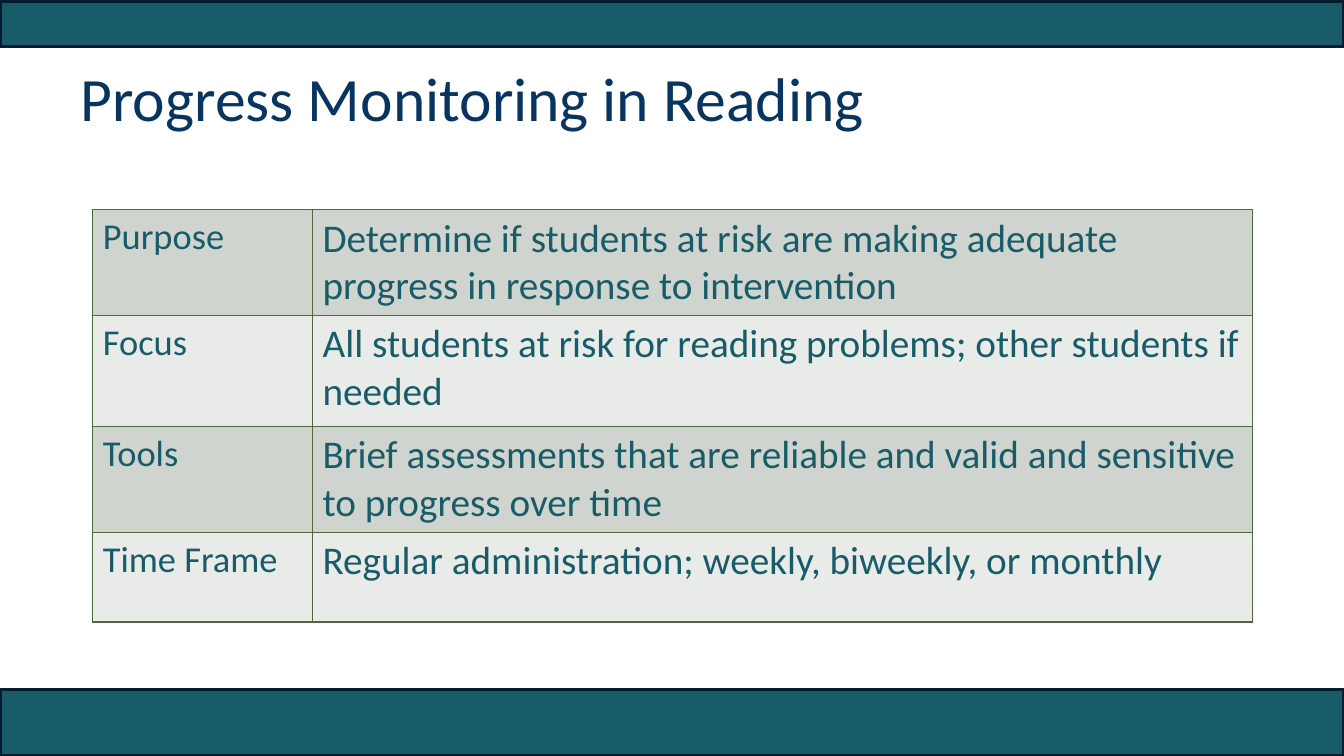
from lxml.etree import SubElement
from pptx import Presentation
from pptx.dml.color import RGBColor
from pptx.enum.shapes import MSO_SHAPE
from pptx.enum.text import MSO_ANCHOR, PP_ALIGN
from pptx.oxml.ns import qn
from pptx.util import Inches, Pt

# Content
TITLE = "Progress Monitoring in Reading"
ROWS = [
    ("Purpose", "Determine if students at risk are making adequate progress in response to intervention"),
    ("Focus", "All students at risk for reading problems; other students if needed"),
    ("Tools", "Brief assessments that are reliable and valid and sensitive to progress over time"),
    ("Time Frame", "Regular administration; weekly, biweekly, or monthly"),
]

# Layout and style
SLIDE_WIDTH, SLIDE_HEIGHT = 13.33, 7.5
BANDS = [(6.84, 0.66), (0.01, 0.45)]  # top, height
COLUMN_WIDTHS = [2.18, 9.32]
ROW_HEIGHTS = [1.05, 1.1, 1.05, 0.89]
COLUMN_SIZES = [26, 28]
ROW_FILLS = ["D0D4CE", "E9EBE8"]
TEAL, NAVY, BAND_LINE, BORDER = "185C69", "08355F", "041B30", "4F693D"


def color(value):
    return RGBColor.from_string(value)


def write(frame, text, size, font_color, line_spacing=1.0):
    frame.word_wrap = True
    paragraph = frame.paragraphs[0]
    paragraph.text = text
    paragraph.alignment = PP_ALIGN.LEFT
    paragraph.line_spacing = line_spacing
    font = paragraph.runs[0].font
    font.name, font.size = "Calibri", Pt(size)
    font.color.rgb = color(font_color)


def add_borders(cell, line_color, width):
    properties = cell._tc.get_or_add_tcPr()
    for position, side in enumerate(("a:lnL", "a:lnR", "a:lnT", "a:lnB")):
        line = SubElement(properties, qn(side), w=str(Pt(width)))
        fill = SubElement(line, qn("a:solidFill"))
        SubElement(fill, qn("a:srgbClr"), val=line_color)
        properties.insert(position, line)  # borders come before the fill


presentation = Presentation()
presentation.slide_width = Inches(SLIDE_WIDTH)
presentation.slide_height = Inches(SLIDE_HEIGHT)
slide = presentation.slides.add_slide(presentation.slide_layouts[5])

# Bands at the bottom and top
for top, height in BANDS:
    band = slide.shapes.add_shape(
        MSO_SHAPE.RECTANGLE, 0, Inches(top), Inches(SLIDE_WIDTH), Inches(height))
    band.shadow.inherit = False
    band.fill.solid()
    band.fill.fore_color.rgb = color(TEAL)
    band.line.color.rgb = color(BAND_LINE)
    band.line.width = Pt(2.5)

# Title
title = slide.shapes.title
title.left, title.top = Inches(0.7), Inches(0.63)
title.width, title.height = Inches(11.5), Inches(1.45)
title.text_frame.vertical_anchor = MSO_ANCHOR.TOP
write(title.text_frame, TITLE, size=44, font_color=NAVY, line_spacing=0.9)

# Table
table = slide.shapes.add_table(
    len(ROWS), len(COLUMN_WIDTHS), Inches(0.92), Inches(2.08),
    Inches(sum(COLUMN_WIDTHS)), Inches(sum(ROW_HEIGHTS))).table
table.first_row = False
for column, width in zip(table.columns, COLUMN_WIDTHS):
    column.width = Inches(width)
for row_index, (row, height, texts) in enumerate(zip(table.rows, ROW_HEIGHTS, ROWS)):
    row.height = Inches(height)
    for cell, text, size in zip(row.cells, texts, COLUMN_SIZES):
        cell.fill.solid()
        cell.fill.fore_color.rgb = color(ROW_FILLS[row_index % 2])
        add_borders(cell, BORDER, width=1)
        write(cell.text_frame, text, size=size, font_color=TEAL)

presentation.save("out.pptx")
